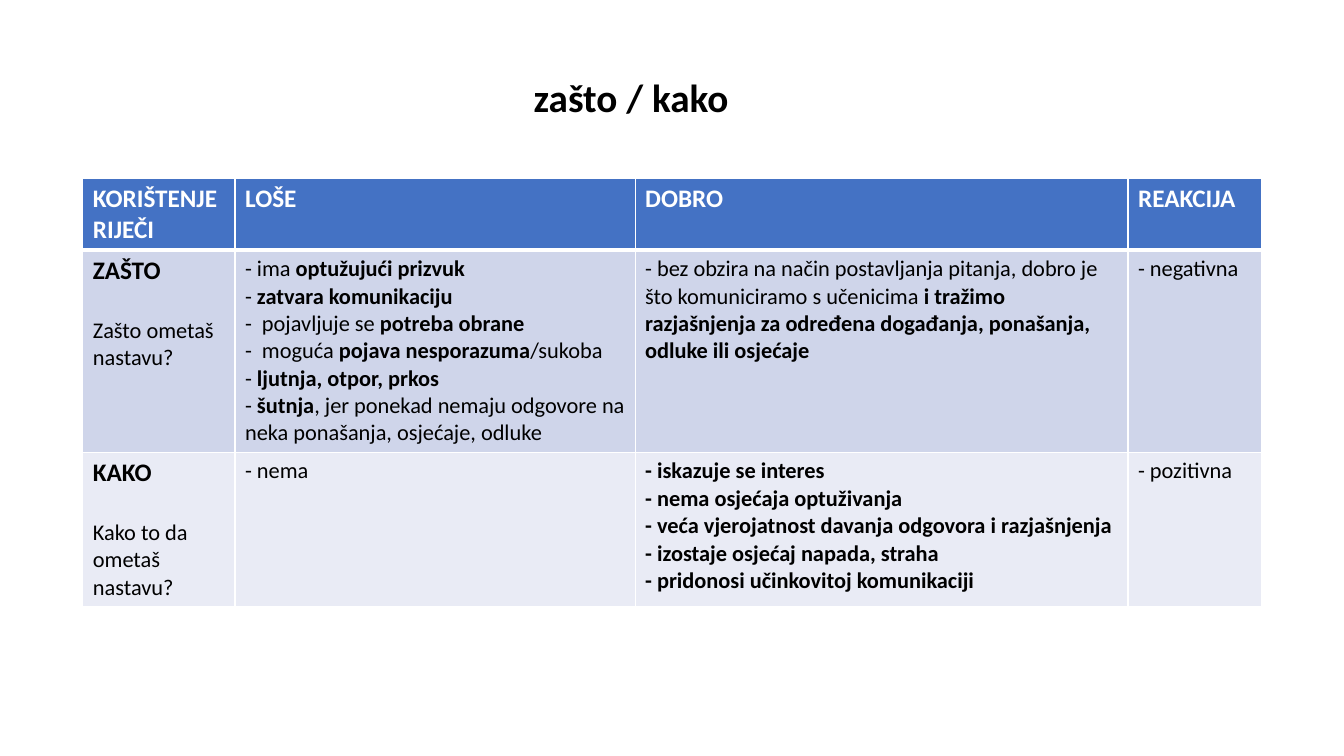
from lxml.etree import SubElement
from pptx import Presentation
from pptx.dml.color import RGBColor
from pptx.enum.text import MSO_ANCHOR, PP_ALIGN
from pptx.oxml.ns import qn
from pptx.util import Pt

# Content: each cell is a list of paragraphs, ** switches bold on and off
TITLE = "**zašto / kako**"
HEADINGS = ["KORIŠTENJE RIJEČI", "LOŠE", "DOBRO", "REAKCIJA"]
ROWS = [
    [
        ["ZAŠTO", "Zašto ometaš nastavu?"],
        [
            "- ima **optužujući prizvuk**",
            "- **zatvara komunikaciju**",
            "-  pojavljuje se **potreba obrane**",
            "-  moguća **pojava nesporazuma**/sukoba",
            "- **ljutnja, otpor, prkos**",
            "-** šutnja**, jer ponekad nemaju odgovore na neka ponašanja, osjećaje, odluke",
        ],
        ["- bez obzira na način postavljanja pitanja, dobro je što komuniciramo s učenicima "
         "**i tražimo razjašnjenja za određena događanja, ponašanja, odluke ili osjećaje**"],
        ["- negativna"],
    ],
    [
        ["KAKO", "Kako to da ometaš nastavu?"],
        ["- nema"],
        [
            "**- iskazuje se interes**",
            "**- nema osjećaja optuživanja**",
            "**- veća vjerojatnost davanja odgovora i razjašnjenja**",
            "**- izostaje osjećaj napada, straha**",
            "**- pridonosi učinkovitoj komunikaciji**",
        ],
        ["- pozitivna"],
    ],
]

COLORS = {"white": "FFFFFF", "black": "000000", "header": "4472C4",
          "band_dark": "CFD5EA", "band_light": "E9EBF5"}
FONT = "Calibri"
COLUMN_WIDTHS = [108.7, 285.8, 352.1, 95.4]
ROW_HEIGHTS = [50.5, 144.5, 105]
TABLE_LEFT, TABLE_TOP = 59.2, 127.6
QUESTION_GAP = 22


def color(name):
    return RGBColor.from_string(COLORS[name])


def write(para, text, size=16, ink="black", align=PP_ALIGN.LEFT, before=0):
    para.alignment = align
    para.space_before = Pt(before)
    for index, part in enumerate(text.split("**")):
        if part:
            span = para.add_run()
            span.text = part
            span.font.name = FONT
            span.font.size = Pt(size)
            span.font.bold = index % 2 == 1
            span.font.color.rgb = color(ink)


def style_cell(cell, fill, top, bottom):
    properties = cell._tc.get_or_add_tcPr()
    for side, width in (("L", 1), ("R", 1), ("T", top), ("B", bottom)):
        line = SubElement(properties, qn(f"a:ln{side}"), w=str(Pt(width)))
        SubElement(SubElement(line, qn("a:solidFill")), qn("a:srgbClr"), val=COLORS["white"])
    cell.fill.solid()
    cell.fill.fore_color.rgb = color(fill)


deck = Presentation()
deck.slide_width, deck.slide_height = Pt(960), Pt(540)
page = deck.slides.add_slide(deck.slide_layouts[5])

# Title
title = page.shapes.title
title.left, title.top, title.width, title.height = Pt(292.3), Pt(33.1), Pt(316.8), Pt(72)
title.fill.solid()
title.fill.fore_color.rgb = color("white")
title.line.color.rgb = color("white")
title.line.width = Pt(1)
title.text_frame.vertical_anchor = MSO_ANCHOR.MIDDLE
write(title.text_frame.paragraphs[0], TITLE, size=28, align=PP_ALIGN.CENTER)

# Table grid
table = page.shapes.add_table(
    len(ROWS) + 1, len(HEADINGS), Pt(TABLE_LEFT), Pt(TABLE_TOP),
    Pt(sum(COLUMN_WIDTHS)), Pt(sum(ROW_HEIGHTS))).table
for column, width in zip(table.columns, COLUMN_WIDTHS):
    column.width = Pt(width)
for row, height in zip(table.rows, ROW_HEIGHTS):
    row.height = Pt(height)

# Header row
for c, heading in enumerate(HEADINGS):
    cell = table.cell(0, c)
    style_cell(cell, "header", top=1, bottom=3)
    write(cell.text_frame.paragraphs[0], f"**{heading}**", size=18, ink="white")

# Body rows: the first column holds a bold word and an example question
for r, cells in enumerate(ROWS, start=1):
    for c, lines in enumerate(cells):
        cell = table.cell(r, c)
        style_cell(cell, "band_dark" if r % 2 else "band_light", top=3 if r == 1 else 1, bottom=1)
        frame = cell.text_frame
        for i, line in enumerate(lines):
            para = frame.add_paragraph() if i else frame.paragraphs[0]
            if c == 0 and i == 0:
                write(para, f"**{line}**", size=18)
            else:
                write(para, line, before=QUESTION_GAP if c == 0 else 0)

deck.save("out.pptx")
